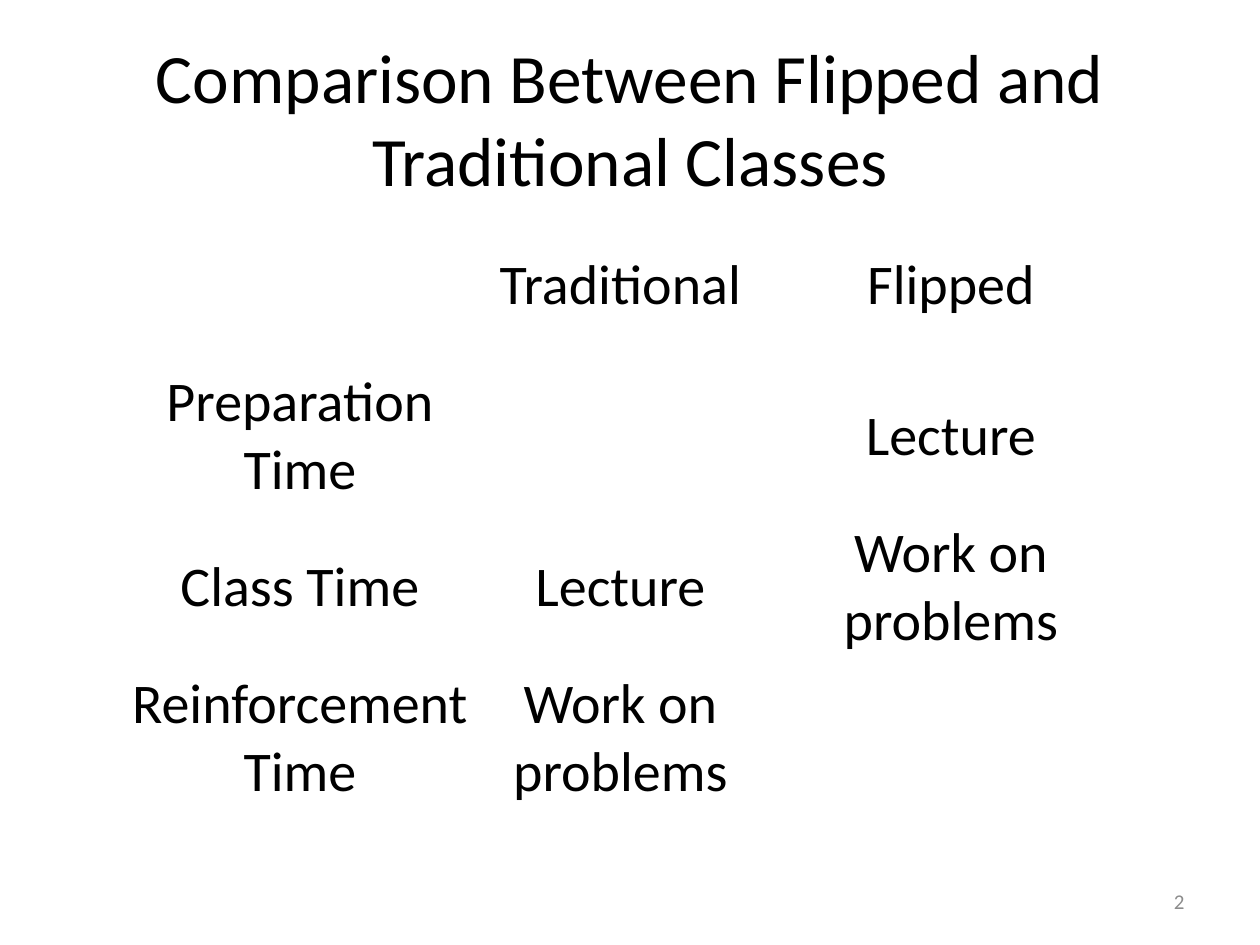
"""Build a slide comparing flipped and traditional classes."""
from dataclasses import dataclass

import lxml.etree
import pptx
import pptx.dml.color
import pptx.enum.text
import pptx.oxml.ns
import pptx.util

PX = 914400 / 126
ALIGN = pptx.enum.text.PP_ALIGN
MIDDLE = pptx.enum.text.MSO_ANCHOR.MIDDLE


@dataclass(frozen=True)
class Theme:
    font: str = "Calibri"
    text: str = "000000"
    muted: str = "8C8C8C"
    border: str = "FFFFFF"
    title_size: float = 39.6
    cell_size: float = 32
    number_size: float = 12
    border_width: float = 1


@dataclass(frozen=True)
class Box:
    left: int
    top: int
    width: int
    height: int

    def emu(self) -> tuple[int, ...]:
        return tuple(px(n) for n in (self.left, self.top, self.width, self.height))


@dataclass(frozen=True)
class Row:
    period: str
    traditional: str
    flipped: str

    def texts(self) -> tuple[str, str, str]:
        return self.period, self.traditional, self.flipped


THEME = Theme()
TITLE = Box(63, 38, 1134, 158)
TABLE = Box(116, 210, 1029, 604)
NUMBER = Box(903, 876, 294, 50)
COLUMN_WIDTHS = (368, 273, 388)
ROWS = (
    Row("", "Traditional", "Flipped"),
    Row("Preparation Time", "", "Lecture"),
    Row("Class Time", "Lecture", "Work on problems"),
    Row("Reinforcement Time", "Work on problems", ""),
)


def px(n: int) -> int:
    return round(n * PX)


def write(tf, text: str, size: float, color: str, align) -> None:
    tf.text = text
    tf.word_wrap = True
    p = tf.paragraphs[0]
    p.alignment = align
    for r in p.runs:
        r.font.name = THEME.font
        r.font.size = pptx.util.Pt(size)
        r.font.color.rgb = pptx.dml.color.RGBColor.from_string(color)


def add_borders(cell) -> None:
    qn = pptx.oxml.ns.qn
    tc_pr = cell._tc.get_or_add_tcPr()
    for side in "LRTB":
        ln = lxml.etree.SubElement(tc_pr, qn(f"a:ln{side}"))
        ln.set("w", str(pptx.util.Pt(THEME.border_width)))
        fill = lxml.etree.SubElement(ln, qn("a:solidFill"))
        lxml.etree.SubElement(fill, qn("a:srgbClr")).set("val", THEME.border)


def add_title(s, text: str) -> None:
    sp = s.shapes.title
    sp.left, sp.top, sp.width, sp.height = TITLE.emu()
    sp.text_frame.vertical_anchor = MIDDLE
    write(sp.text_frame, text, THEME.title_size, THEME.text, ALIGN.CENTER)


def add_comparison(s, rows: tuple[Row, ...]) -> None:
    table = s.shapes.add_table(len(rows), len(COLUMN_WIDTHS), *TABLE.emu()).table
    table.first_row = table.horz_banding = False
    for column, width in zip(table.columns, COLUMN_WIDTHS):
        column.width = px(width)
    for i, row in enumerate(rows):
        table.rows[i].height = px(TABLE.height // len(rows))
        for cell, text in zip(table.rows[i].cells, row.texts()):
            add_borders(cell)
            cell.fill.background()
            cell.vertical_anchor = MIDDLE
            write(cell.text_frame, text, THEME.cell_size, THEME.text, ALIGN.CENTER)


def add_number(s, text: str) -> None:
    tf = s.shapes.add_textbox(*NUMBER.emu()).text_frame
    tf.vertical_anchor = MIDDLE
    write(tf, text, THEME.number_size, THEME.muted, ALIGN.RIGHT)


def main() -> None:
    prs = pptx.Presentation()
    prs.slide_width, prs.slide_height = px(1260), px(945)
    s = prs.slides.add_slide(prs.slide_layouts.get_by_name("Title Only"))
    add_title(s, "Comparison Between Flipped and Traditional Classes")
    add_comparison(s, ROWS)
    add_number(s, "2")
    prs.save("out.pptx")


if __name__ == "__main__":
    main()
